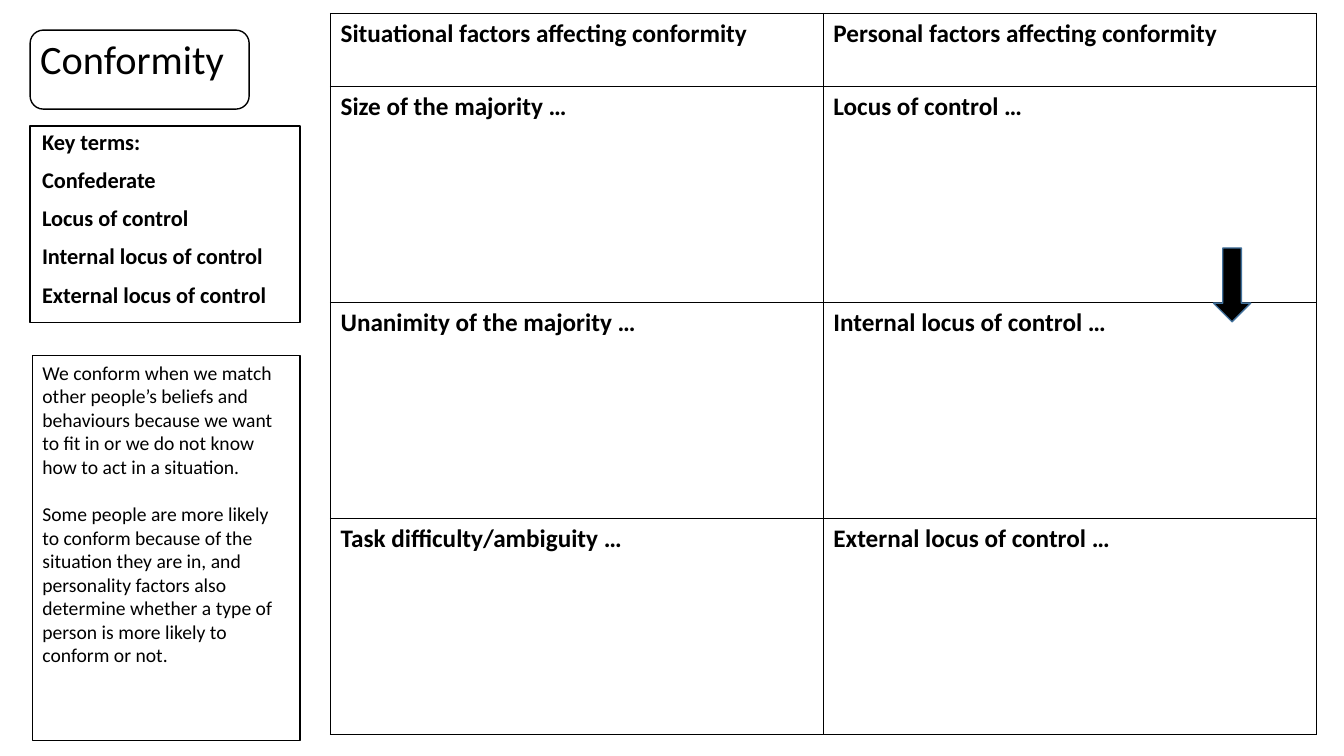
from lxml.etree import SubElement
from pptx import Presentation
from pptx.dml.color import RGBColor
from pptx.enum.shapes import MSO_SHAPE as Shape
from pptx.enum.text import MSO_ANCHOR as Anchor, MSO_AUTO_SIZE as AutoSize, PP_ALIGN as Align
from pptx.oxml.ns import qn
from pptx.util import Cm, Pt

COLOURS = {"ink": "000000", "arrow_edge": "43739E"}
FONT = "Calibri"
KEY_TERMS = ["Key terms:", "Confederate", "Locus of control",
             "Internal locus of control", "External locus of control"]
EXPLANATION = [
    "We conform when we match other people’s beliefs and behaviours because we want "
    "to fit in or we do not know how to act in a situation.",
    "Some people are more likely to conform because of the situation they are in, and "
    "personality factors also determine whether a type of person is more likely to "
    "conform or not.",
]
FACTORS = [
    ("Situational factors affecting conformity", "Personal factors affecting conformity"),
    ("Size of the majority …", "Locus of control …"),
    ("Unanimity of the majority …", "Internal locus of control …"),
    ("Task difficulty/ambiguity …", "External locus of control …"),
]


def colour(name):
    """Return the named colour."""
    return RGBColor.from_string(COLOURS[name])


def write(frame, texts, size, bold=False, gap=0, spacing=1.0):
    """Fill a text frame with left-aligned paragraphs, set apart by gap points."""
    frame.word_wrap = True
    for index, text in enumerate(texts):
        para = frame.paragraphs[0] if index == 0 else frame.add_paragraph()
        para.text = text
        para.alignment = Align.LEFT
        para.line_spacing = spacing
        para.space_before = Pt(gap if index else 0)
        para.font.name = FONT
        para.font.size = Pt(size)
        para.font.bold = bold
        para.font.color.rgb = colour("ink")


def add_title(page, text, left, top, width, height):
    """Place and format the title placeholder."""
    title = page.shapes.title
    title.left, title.top, title.width, title.height = left, top, width, height
    write(title.text_frame, [text], 28.8, spacing=0.9)
    title.text_frame.vertical_anchor = Anchor.BOTTOM
    title.text_frame.auto_size = AutoSize.NONE


def add_box(page, kind, left, top, width, height, fill=None, line="ink"):
    """Add an outlined shape, unfilled by default, with text starting at the top."""
    box = page.shapes.add_shape(kind, left, top, width, height)
    box.shadow.inherit = False
    if fill:
        box.fill.solid()
        box.fill.fore_color.rgb = colour(fill)
    else:
        box.fill.background()
    box.line.color.rgb = colour(line)
    box.line.width = Pt(1)
    box.text_frame.vertical_anchor = Anchor.TOP
    return box


def outline_cell(cell):
    """Draw a thin line on each side of a cell."""
    properties = cell._tc.get_or_add_tcPr()
    for side in ("a:lnL", "a:lnR", "a:lnT", "a:lnB"):
        border = SubElement(properties, qn(side), w=str(Pt(1)))
        fill = SubElement(border, qn("a:solidFill"))
        SubElement(fill, qn("a:srgbClr"), val=COLOURS["ink"])


def add_factor_table(page, rows, left, top, column_width, row_heights):
    """Add the grid of factors with plain outlined cells."""
    columns = len(rows[0])
    table = page.shapes.add_table(len(rows), columns, left, top,
                                  column_width * columns, sum(row_heights)).table
    table.first_row = table.horz_banding = False
    for column in table.columns:
        column.width = column_width
    for row, height, texts in zip(table.rows, row_heights, rows):
        row.height = height
        for cell, text in zip(row.cells, texts):
            write(cell.text_frame, [text], 18, bold=True)
            outline_cell(cell)
            cell.fill.background()


def main():
    """Build the conformity worksheet."""
    deck = Presentation()
    deck.slide_width, deck.slide_height = Cm(33.87), Cm(19.05)
    page = deck.slides.add_slide(deck.slide_layouts[5])

    add_title(page, "Conformity", Cm(0.76), Cm(0.76), Cm(6.73), Cm(1.47))
    add_box(page, Shape.ROUNDED_RECTANGLE, Cm(0.76), Cm(0.76), Cm(5.52), Cm(1.99))

    terms = add_box(page, Shape.RECTANGLE, Cm(0.76), Cm(3.18), Cm(6.8), Cm(4.95))
    terms.text_frame.margin_left = Cm(0.3)
    write(terms.text_frame, KEY_TERMS, 16, bold=True, gap=10, spacing=0.9)

    explanation = add_box(page, Shape.RECTANGLE, Cm(0.82), Cm(8.96), Cm(6.74), Cm(9.7))
    write(explanation.text_frame, EXPLANATION, 14, gap=17)

    add_factor_table(page, FACTORS, Cm(8.33), Cm(0.34), Cm(12.42),
                     [Cm(1.84)] + [Cm(5.44)] * 3)
    add_box(page, Shape.DOWN_ARROW, Cm(30.58), Cm(6.25), Cm(0.94), Cm(1.86),
            fill="ink", line="arrow_edge")
    deck.save("out.pptx")


if __name__ == "__main__":
    main()
